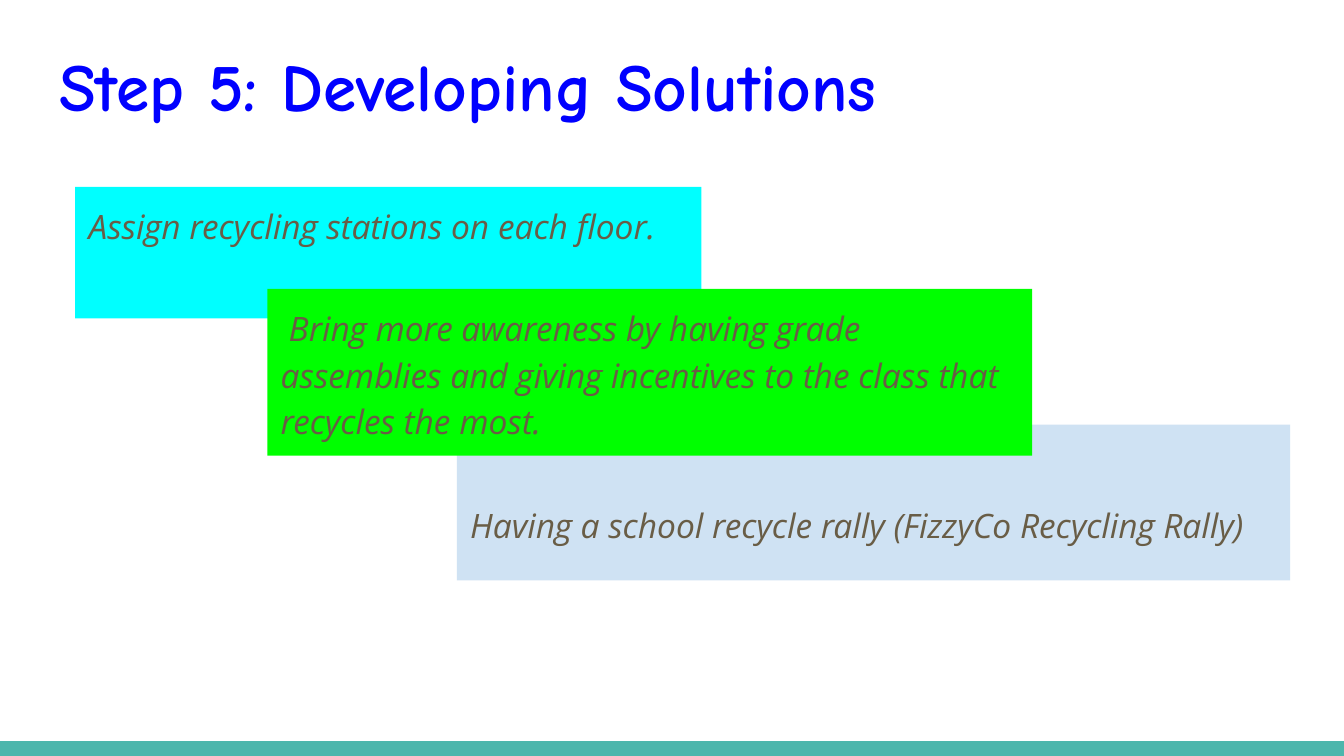
from pptx import Presentation, util as u
from pptx.dml.color import RGBColor
from pptx.enum import shapes, text
from pptx.oxml.xmlchemy import OxmlElement

W = 10
H = W * 9 / 16
BAR = 0.11
BODY = {"name": "Open Sans", "size": u.Pt(18), "italic": True, "bold": False}
TITLE = {"name": "Comic Neue", "size": u.Pt(36), "bold": True}


def color(value):
    """Turn a hex string into a colour."""
    return RGBColor.from_string(value)


def place(sp, left, top, width, height):
    """Set the position and size of a shape in inches."""
    box = {"left": left, "top": top, "width": width, "height": height}
    for name, value in box.items():
        setattr(sp, name, u.Inches(value))


def paint(sp, fill):
    """Give a shape a flat fill without outline."""
    sp.fill.solid()
    sp.fill.fore_color.rgb = color(fill)
    sp.line.fill.background()


def write(sp, words, font, ink, inset=0.1, indent=0):
    """Write one left-aligned paragraph from the top of a shape."""
    tf = sp.text_frame
    frame = {"word_wrap": True, "auto_size": text.MSO_AUTO_SIZE.NONE,
             "vertical_anchor": text.MSO_ANCHOR.TOP,
             "margin_left": u.Inches(0.1), "margin_right": u.Inches(0.1),
             "margin_top": u.Inches(inset), "margin_bottom": u.Inches(0.1)}
    for name, value in frame.items():
        setattr(tf, name, value)
    p = tf.paragraphs[0]
    p.alignment = text.PP_ALIGN.LEFT
    p.space_before = u.Pt(0)
    p.line_spacing = 1.15 if font is BODY else 1.0
    props = p._p.get_or_add_pPr()
    props.set("marL", "0")
    props.set("indent", str(u.Inches(indent)))
    props.append(OxmlElement("a:buNone"))
    r = p.add_run()
    r.text = words
    for name, value in font.items():
        setattr(r.font, name, value)
    r.font.color.rgb = color(ink)


def add_block(s, box, fill):
    """Add a flat rectangle."""
    sp = s.shapes.add_shape(shapes.MSO_SHAPE.RECTANGLE, *map(u.Inches, box))
    sp.shadow.inherit = False
    paint(sp, fill)
    return sp


def main():
    """Build the slide and save it."""
    prs = Presentation()
    prs.slide_width, prs.slide_height = u.Inches(W), u.Inches(H)
    s = prs.slides.add_slide(prs.slide_layouts[1])

    add_block(s, (0, H - BAR, W, BAR), "4DB6AC")
    title, stations = s.placeholders
    place(title, 0.34, 0.23, W - 2 * 0.34, 0.69)
    write(title, "Step 5: Developing Solutions", TITLE, "0000FF")

    place(stations, 0.56, 1.39, 4.66, 0.98)
    paint(stations, "00FFFF")
    rally = add_block(s, (3.4, 3.16, 6.2, 1.16), "CFE2F3")
    awareness = add_block(s, (1.99, 2.15, 5.69, 1.24), "00FF00")

    solutions = [
        (stations, "Assign recycling stations on each floor.", 0.1, 0),
        (awareness, "Bring more awareness by having grade assemblies and giving "
                    "incentives to the class that recycles the most.", 0.1, 0.06),
        (rally, "Having a school recycle rally (FizzyCo Recycling Rally)", 0.55, 0),
    ]
    for sp, words, inset, indent in solutions:
        write(sp, words, BODY, "695D46", inset, indent)

    prs.save("out.pptx")


if __name__ == "__main__":
    main()
